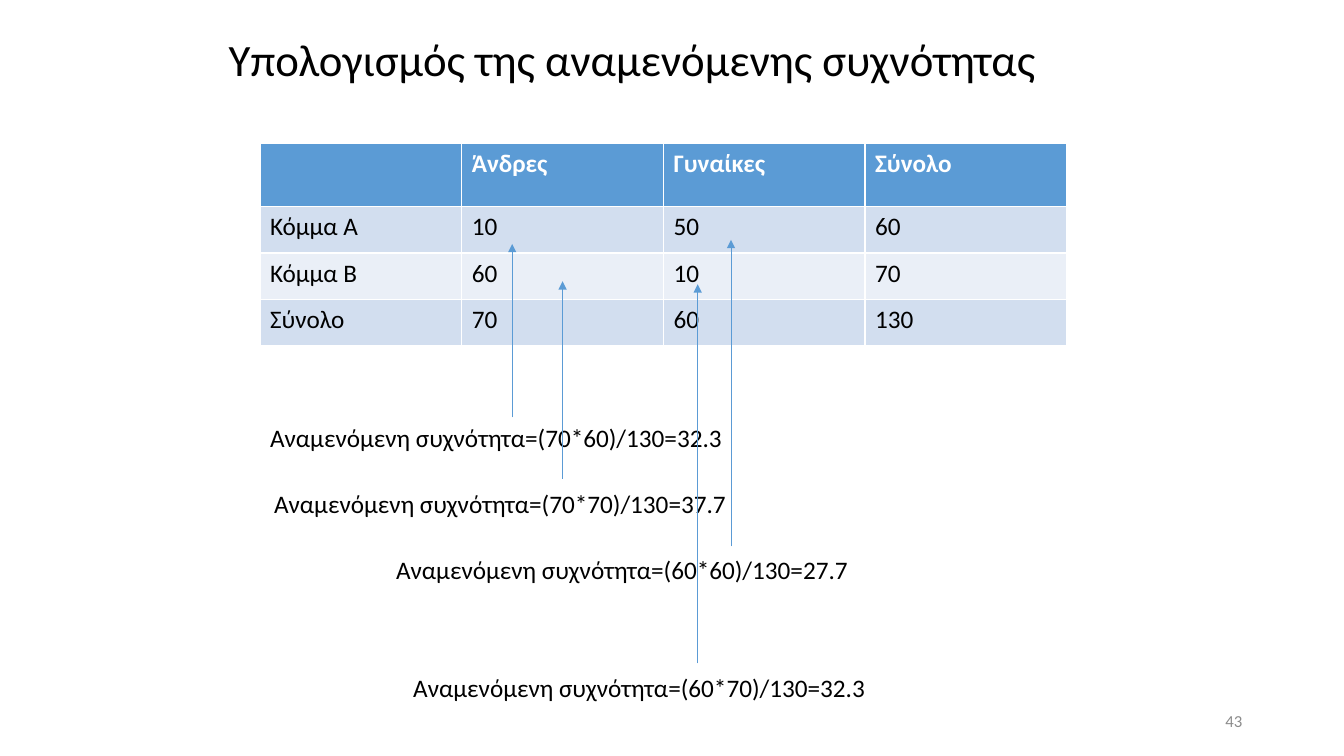
import pptx
import pptx.dml.color
import pptx.enum.shapes
import pptx.enum.text
import pptx.oxml
import pptx.oxml.ns
import pptx.util

Inches = pptx.util.Inches
ALIGN = pptx.enum.text.PP_ALIGN
ANCHOR = pptx.enum.text.MSO_ANCHOR
BLUE, BLACK, WHITE, GREY = "5B9BD5", "000000", "FFFFFF", "8C8C8C"
BANDS = ["D2DEEF", "EAEFF7"]

HEADS = ["", "Άνδρες", "Γυναίκες", "Σύνολο"]
COUNTS = [
    ["Κόμμα Α", 10, 50, 60],
    ["Κόμμα Β", 60, 10, 70],
    ["Σύνολο", 70, 60, 130],
]
# Table row and column, text left and top, arrow x, start y and end y
STEPS = [
    (0, 1, 2.58, 4.14, 5.08, 4.14, 2.42),
    (1, 1, 2.62, 4.8, 5.58, 4.75, 2.79),
    (0, 2, 3.83, 5.45, 7.25, 5.42, 2.38),
    (1, 2, 4, 6.62, 6.92, 6.58, 2.82),
]


def color(code):
    return pptx.dml.color.RGBColor.from_string(code)


def style(para, size, code, **extra):
    form = {"name": "Calibri", "size": pptx.util.Pt(size), **extra}
    for key, value in form.items():
        setattr(para.font, key, value)
    para.font.color.rgb = color(code)


def label(slide, box, text, size=18, code=BLACK, **form):
    frame = slide.shapes.add_textbox(*map(Inches, box)).text_frame
    frame.word_wrap = True
    frame.vertical_anchor = form.pop("anchor", ANCHOR.TOP)
    para = frame.paragraphs[0]
    para.text = text
    for key, value in form.items():
        setattr(para, key, value)
    style(para, size, code)


def arrow(slide, x, start, end):
    line = slide.shapes.add_connector(
        pptx.enum.shapes.MSO_CONNECTOR.STRAIGHT,
        Inches(x), Inches(start), Inches(x), Inches(end))
    line.line.color.rgb = color(BLUE)
    line.line.width = pptx.util.Pt(0.5)
    space = pptx.oxml.ns.nsdecls("a")
    props = line.line._get_or_add_ln()
    props.append(pptx.oxml.parse_xml(f'<a:tailEnd {space} type="triangle"/>'))
    props.addnext(pptx.oxml.parse_xml(f"<a:effectLst {space}/>"))


def counts(slide, box):
    # The default table style draws the white rules
    rows = [HEADS] + COUNTS
    table = slide.shapes.add_table(
        len(rows), len(HEADS), *map(Inches, box)).table
    for r, row in enumerate(rows):
        table.rows[r].height = Inches(0.46 if r else 0.63)
        for c, value in enumerate(row):
            cell = table.cell(r, c)
            cell.fill.solid()
            cell.fill.fore_color.rgb = color(BANDS[(r - 1) % 2] if r else BLUE)
            cell.text = str(value)
            style(cell.text_frame.paragraphs[0], 18,
                  BLACK if r else WHITE, bold=r == 0)


def steps(slide, wide, high):
    # Expected count = column total * row total / grand total
    total = COUNTS[-1][-1]
    for r, c, left, top, x, start, end in STEPS:
        col, row = COUNTS[-1][c], COUNTS[r][-1]
        label(slide, (left, top, wide, high),
              f"Αναμενόμενη συχνότητα=({col}*{row})/{total}="
              f"{col * row / total:.1f}")
        arrow(slide, x, start, end)


def main():
    deck = pptx.Presentation()
    deck.slide_width, deck.slide_height = Inches(13.33), Inches(7.5)
    slide = deck.slides.add_slide(deck.slide_layouts[6])

    # Title and slide number
    label(slide, (2.17, 0.3, 9, 0.62),
          "Υπολογισμός της αναμενόμενης συχνότητας", 32,
          anchor=ANCHOR.MIDDLE, line_spacing=0.9)
    label(slide, (9.42, 6.95, 3, 0.4), "43", 12, GREY,
          anchor=ANCHOR.MIDDLE, alignment=ALIGN.RIGHT)

    # Table and the sums that point into it
    counts(slide, (2.58, 1.42, 8, 2))
    steps(slide, 8.08, 0.4)
    deck.save("out.pptx")


if __name__ == "__main__":
    main()
